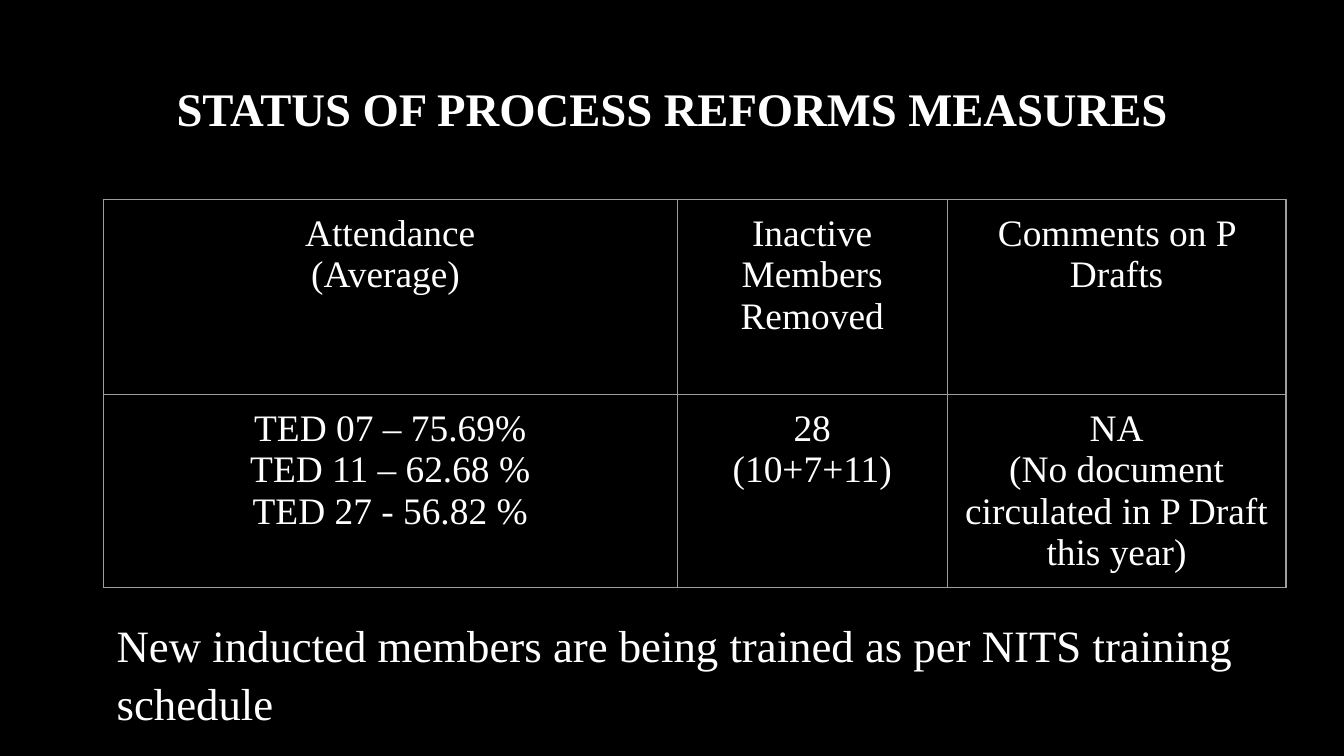
from lxml.etree import SubElement
from pptx import Presentation
from pptx.dml.color import RGBColor
from pptx.enum.text import MSO_ANCHOR, PP_ALIGN
from pptx.oxml.ns import qn
from pptx.util import Pt

TITLE = "STATUS OF PROCESS REFORMS MEASURES"
ROWS = [
    [["Attendance", "(Average) "],
     ["Inactive Members Removed"],
     ["Comments on P Drafts"]],
    [["TED 07 – 75.69%", "TED 11 – 62.68 %", "TED 27 - 56.82 %"],
     ["28", "(10+7+11)"],
     ["NA", "(No document circulated in P Draft this year)"]],
]
NOTE = "New inducted members are being trained as per NITS training schedule"

FONT = "Times New Roman"
BLACK = RGBColor(0, 0, 0)
WHITE = RGBColor(255, 255, 255)
GREY = RGBColor(0x9E, 0x9E, 0x9E)
LEFT = 55.4
WIDTHS = [307.4, 144.7, 181.5]
HEIGHTS = [104.4, 103]
PAD = 7.2


def write(frame, lines, size, bold=False, align=PP_ALIGN.LEFT, space=None):
    frame.word_wrap = True
    for i, line in enumerate(lines):
        para = frame.paragraphs[0] if i == 0 else frame.add_paragraph()
        para.alignment = align
        if space:
            para.line_spacing = space
        run = para.add_run()
        run.text = line
        font = run.font
        font.name, font.size, font.bold = FONT, Pt(size), bold
        font.color.rgb = WHITE


def pad(box):
    box.margin_left = box.margin_right = Pt(PAD)
    box.margin_top = box.margin_bottom = Pt(PAD)


def rule(cell):
    """Draw a thin grey border on all four sides of a cell."""
    props = cell._tc.get_or_add_tcPr()
    for i, side in enumerate(("lnL", "lnR", "lnT", "lnB")):
        line = props.makeelement(qn(f"a:{side}"), {"w": str(Pt(0.75))})
        fill = SubElement(line, qn("a:solidFill"))
        SubElement(fill, qn("a:srgbClr"), val=str(GREY))
        props.insert(i, line)


def main():
    deck = Presentation()
    deck.slide_width, deck.slide_height = Pt(720), Pt(405)
    slide = deck.slides.add_slide(deck.slide_layouts[5])
    back = slide.background.fill
    back.solid()
    back.fore_color.rgb = BLACK

    title = slide.shapes.title
    title.left, title.top = Pt(24.5), Pt(35.3)
    title.width, title.height = Pt(671), Pt(45.4)
    pad(title.text_frame)
    title.text_frame.vertical_anchor = MSO_ANCHOR.MIDDLE
    write(title.text_frame, [TITLE], 25, bold=True, align=PP_ALIGN.CENTER)

    table = slide.shapes.add_table(
        len(HEIGHTS), len(WIDTHS), Pt(LEFT), Pt(107),
        Pt(sum(WIDTHS)), Pt(sum(HEIGHTS))).table
    for col, width in zip(table.columns, WIDTHS):
        col.width = Pt(width)
    for row, height, texts in zip(table.rows, HEIGHTS, ROWS):
        row.height = Pt(height)
        for cell, lines in zip(row.cells, texts):
            pad(cell)
            cell.fill.background()
            rule(cell)
            write(cell.text_frame, lines, 20, align=PP_ALIGN.CENTER)

    note = slide.shapes.add_textbox(Pt(LEFT), Pt(324.7), Pt(664.6), Pt(65.5))
    write(note.text_frame, [NOTE], 24, space=1.09)
    deck.save("out.pptx")


if __name__ == "__main__":
    main()
